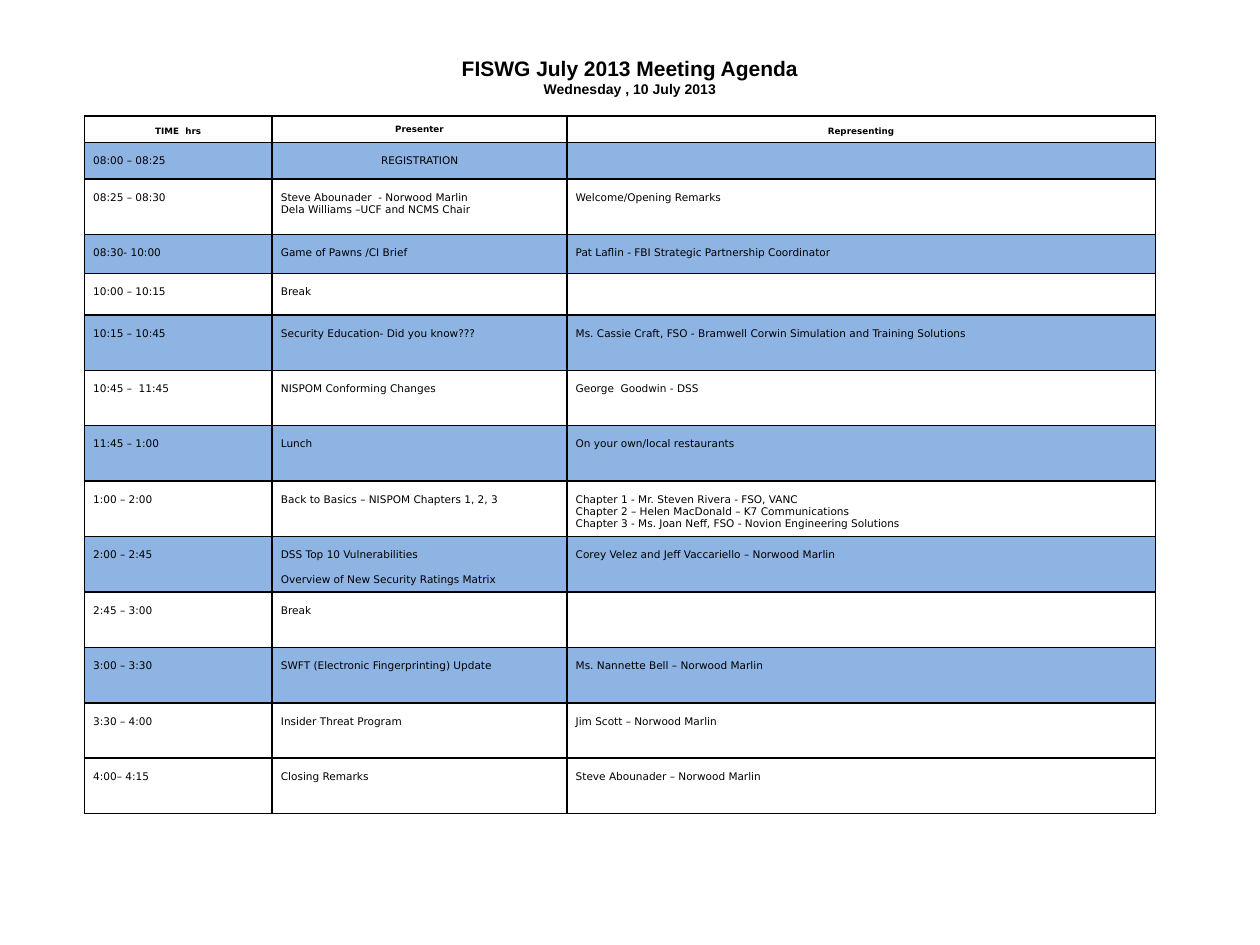
import pptx
import pptx.dml.color
import pptx.enum.text
import pptx.oxml.ns
import pptx.util
from lxml import etree

Inches = pptx.util.Inches
Pt = pptx.util.Pt
CENTER = pptx.enum.text.PP_ALIGN.CENTER
LEFT = pptx.enum.text.PP_ALIGN.LEFT
ANCHOR = pptx.enum.text.MSO_ANCHOR

COLORS = {"text": "000000", "border": "000000", "band": "8EB4E3", "plain": "FFFFFF"}
TITLE_FONT = "Arial"
TABLE_FONT = "DejaVu Sans"
COLUMN_WIDTHS = [1.49, 2.34, 4.67]
ROW_HEIGHTS = [0.21, 0.29, 0.44, 0.31, 0.33] + [0.44] * 9
BANDED_ROWS = {1, 3, 5, 7, 9, 11}
HEADINGS = ["TIME  hrs", "Presenter", "Representing"]
AGENDA = [
    ("08:00 – 08:25", "REGISTRATION", ""),
    ("08:25 – 08:30",
     "Steve Abounader  - Norwood Marlin\nDela Williams –UCF and NCMS Chair",
     "Welcome/Opening Remarks"),
    ("08:30- 10:00", "Game of Pawns /CI Brief",
     "Pat Laflin - FBI Strategic Partnership Coordinator"),
    ("10:00 – 10:15", "Break", ""),
    ("10:15 – 10:45", "Security Education- Did you know???",
     "Ms. Cassie Craft, FSO - Bramwell Corwin Simulation and Training Solutions"),
    ("10:45 –  11:45", "NISPOM Conforming Changes", "George  Goodwin - DSS"),
    ("11:45 – 1:00", "Lunch", "On your own/local restaurants"),
    ("1:00 – 2:00", "Back to Basics – NISPOM Chapters 1, 2, 3",
     "Chapter 1 - Mr. Steven Rivera - FSO, VANC\n"
     "Chapter 2 – Helen MacDonald – K7 Communications\n"
     "Chapter 3 - Ms. Joan Neff, FSO - Novion Engineering Solutions"),
    ("2:00 – 2:45",
     "DSS Top 10 Vulnerabilities\nOverview of New Security Ratings Matrix",
     "Corey Velez and Jeff Vaccariello – Norwood Marlin"),
    ("2:45 – 3:00", "Break", ""),
    ("3:00 – 3:30", "SWFT (Electronic Fingerprinting) Update",
     "Ms. Nannette Bell – Norwood Marlin"),
    ("3:30 – 4:00", "Insider Threat Program", "Jim Scott – Norwood Marlin"),
    ("4:00– 4:15", "Closing Remarks", "Steve Abounader – Norwood Marlin"),
]
SPACED_ENTRY = AGENDA[8][1]


def rgb(name):
    return pptx.dml.color.RGBColor.from_string(COLORS[name])


def format_paragraph(para, font, size, bold, align):
    para.alignment = align
    for span in para.runs:
        span.font.name = font
        span.font.size = Pt(size)
        span.font.bold = bold
        span.font.color.rgb = rgb("text")
    if not para.runs:
        end = etree.SubElement(para._p, pptx.oxml.ns.qn("a:endParaRPr"))
        end.set("sz", str(size * 100))


def add_border(cell, width):
    properties = cell._tc.get_or_add_tcPr()
    for side in ("lnL", "lnR", "lnT", "lnB"):
        line = etree.SubElement(properties, pptx.oxml.ns.qn("a:" + side), w=str(Pt(width)))
        fill = etree.SubElement(line, pptx.oxml.ns.qn("a:solidFill"))
        etree.SubElement(fill, pptx.oxml.ns.qn("a:srgbClr"), val=COLORS["border"])


def fill_cell(cell, text, size, bold, align, fill, top):
    add_border(cell, 1)
    cell.fill.solid()
    cell.fill.fore_color.rgb = rgb(fill)
    cell.margin_left = cell.margin_right = Inches(0.07)
    cell.margin_top = Inches(top)
    cell.margin_bottom = 0
    cell.text_frame.text = text
    for para in cell.text_frame.paragraphs:
        format_paragraph(para, TABLE_FONT, size, bold, align)


def add_title(page):
    box = page.shapes.add_textbox(Inches(0), Inches(0.37), Inches(10), Inches(0.74))
    frame = box.text_frame
    frame.word_wrap = True
    frame.vertical_anchor = ANCHOR.TOP
    frame.margin_top = Inches(0.07)
    frame.text = "FISWG July 2013 Meeting Agenda\nWednesday , 10 July 2013"
    for para, size in zip(frame.paragraphs, (12, 8)):
        format_paragraph(para, TITLE_FONT, size, True, CENTER)


def add_agenda(page):
    table = page.shapes.add_table(
        len(ROW_HEIGHTS), len(COLUMN_WIDTHS), Inches(0.67), Inches(0.92),
        Inches(sum(COLUMN_WIDTHS)), Inches(sum(ROW_HEIGHTS))).table
    table.first_row = table.horz_banding = False
    for column, width in zip(table.columns, COLUMN_WIDTHS):
        column.width = Inches(width)
    for row, height in zip(table.rows, ROW_HEIGHTS):
        row.height = Inches(height)

    for index, heading in enumerate(HEADINGS):
        cell = table.cell(0, index)
        middle = heading == "Presenter"
        fill_cell(cell, heading, 5, True, CENTER, "plain", 0 if middle else 0.08)
        if middle:
            cell.vertical_anchor = ANCHOR.MIDDLE

    for row_index, entries in enumerate(AGENDA, 1):
        fill = "band" if row_index in BANDED_ROWS else "plain"
        for column_index, text in enumerate(entries):
            cell = table.cell(row_index, column_index)
            align = CENTER if text == "REGISTRATION" else LEFT
            fill_cell(cell, text, 6, False, align, fill, 0.1)
            if text == SPACED_ENTRY:
                cell.text_frame.paragraphs[1].space_before = Pt(7)


def main():
    deck = pptx.Presentation()
    deck.slide_width = Inches(10)
    deck.slide_height = Inches(7.5)
    page = deck.slides.add_slide(deck.slide_layouts[6])
    add_title(page)
    add_agenda(page)
    deck.save("out.pptx")


if __name__ == "__main__":
    main()
